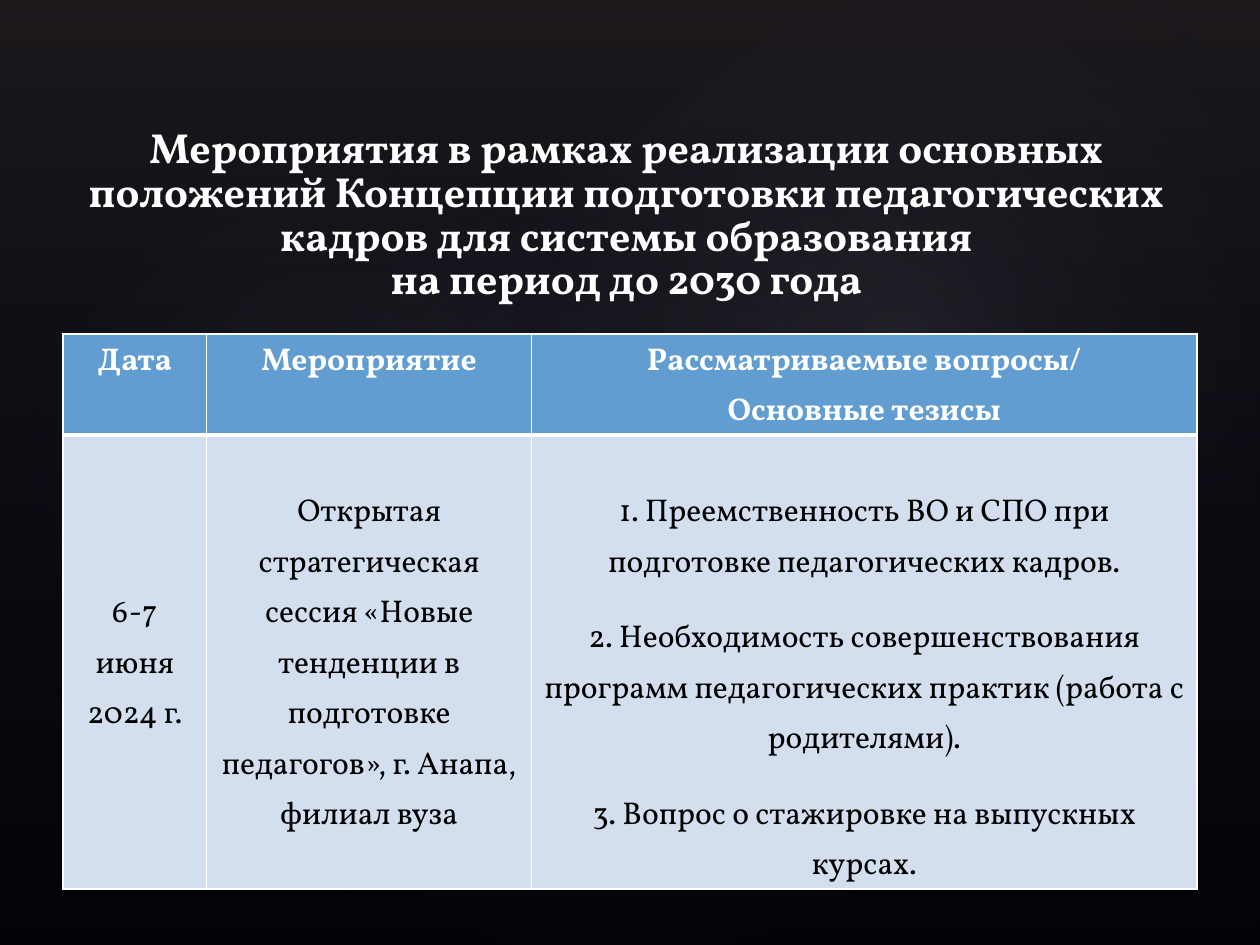
from dataclasses import dataclass
from pptx import Presentation
from pptx.dml.color import RGBColor
from pptx.enum.shapes import MSO_SHAPE
from pptx.enum.text import MSO_ANCHOR, PP_ALIGN
from pptx.oxml import parse_xml
from pptx.oxml.ns import nsdecls, qn
from pptx.slide import Slide
from pptx.table import _Cell
from pptx.text.text import _Paragraph
from pptx.util import Inches, Pt


@dataclass(frozen=True)
class Theme:
    font: str = "Vollkorn"
    white: str = "FFFFFF"
    black: str = "000000"
    head: str = "629DD1"
    body: str = "D3DFEE"
    glow: str = "C4BCC6"
    haze: str = "504652"
    navy: str = "242852"
    title: int = 24
    text: int = 18
    thin: int = 1
    thick: int = 3


@dataclass(frozen=True)
class Stop:
    place: int
    color: str
    alpha: int


@dataclass(frozen=True)
class Glow:
    left: float
    top: float
    width: float
    height: float
    turn: float
    alpha: int


@dataclass(frozen=True)
class Entry:
    lines: tuple[str, ...]
    top: float = 0
    gap: float = 0


@dataclass(frozen=True)
class Row:
    height: float
    fill: str
    color: str
    bold: bool
    edges: dict[str, int]
    cells: tuple[Entry, ...]


THEME = Theme()
LINEAR = '<a:lin ang="5400000" scaled="0"/>'
RADIAL = ('<a:path path="circle"><a:fillToRect l="50000" t="50000" '
          'r="50000" b="50000"/></a:path>')
GLOWS = (
    Glow(1.5, 1.14, 7.92, 6.24, 328.7, 7),
    Glow(-0.3, 1.28, 6.06, 4.9, 294.3, 8),
    Glow(3.58, 0.13, 7.09, 5.2, 328.7, 8),
)
TITLE = ("Мероприятия в рамках реализации основных положений Концепции "
         "подготовки педагогических кадров для системы образования",
         "на период до 2030 года")
WIDTHS = (1.14, 2.58, 5.28)
ROWS = (
    Row(0.64, THEME.head, THEME.white, True,
        {"L": THEME.thin, "R": THEME.thin, "T": THEME.thin, "B": THEME.thick},
        (Entry(("Дата",)), Entry(("Мероприятие",)),
         Entry(("Рассматриваемые вопросы/", "Основные тезисы")))),
    Row(3.2, THEME.body, THEME.black, False,
        {"L": THEME.thin, "R": THEME.thin, "T": THEME.thick, "B": THEME.thin},
        (Entry(("6-7 июня 2024 г.",), 1.2),
         Entry(("Открытая стратегическая сессия «Новые тенденции в подготовке "
                "педагогов», г. Анапа, филиал вуза",), 0.4),
         Entry(("1. Преемственность ВО и СПО при подготовке педагогических "
                "кадров.",
                "2. Необходимость совершенствования программ педагогических "
                "практик (работа с родителями).",
                "3. Вопрос о стажировке на выпускных курсах."), 0.4, 14.4))),
)


def add_run(para: _Paragraph, text: str, size: int, color: str, bold: bool) -> None:
    run = para.add_run()
    run.text = text
    run.font.name = THEME.font
    run.font.size = Pt(size)
    run.font.bold = bold
    run.font.color.rgb = RGBColor.from_string(color)


def add_shade(slide: Slide, kind: MSO_SHAPE, box: tuple[float, ...],
              stops: tuple[Stop, ...], mode: str, turn: float = 0) -> None:
    shape = slide.shapes.add_shape(kind, *map(Inches, box))
    shape.rotation = turn
    shape.shadow.inherit = False
    shape.line.fill.background()
    shape.fill.background()
    marks = "".join(
        f'<a:gs pos="{s.place * 1000}"><a:srgbClr val="{s.color}">'
        f'<a:alpha val="{s.alpha * 1000}"/></a:srgbClr></a:gs>' for s in stops)
    grad = parse_xml(f'<a:gradFill {nsdecls("a")} rotWithShape="1">'
                     f'<a:gsLst>{marks}</a:gsLst>{mode}</a:gradFill>')
    props = shape._element.spPr
    props.replace(props.find(qn("a:noFill")), grad)


def add_title(slide: Slide) -> None:
    box = slide.shapes.add_textbox(Inches(0.47), Inches(0.6), Inches(9), Inches(1.81))
    frame = box.text_frame
    frame.word_wrap = True
    frame.vertical_anchor = MSO_ANCHOR.BOTTOM
    frame.margin_bottom = 0
    para = frame.paragraphs[0]
    para.alignment = PP_ALIGN.CENTER
    para.line_spacing = 0.87
    for rank, text in enumerate(TITLE):
        if rank:
            para.add_line_break()
        add_run(para, text, THEME.title, THEME.white, True)


def fill_cell(cell: _Cell, entry: Entry, row: Row) -> None:
    props = cell._tc.get_or_add_tcPr()
    for side, width in row.edges.items():
        props.append(parse_xml(
            f'<a:ln{side} {nsdecls("a")} w="{Pt(width)}"><a:solidFill>'
            f'<a:srgbClr val="{THEME.white}"/></a:solidFill></a:ln{side}>'))
    cell.fill.solid()
    cell.fill.fore_color.rgb = RGBColor.from_string(row.fill)
    cell.margin_left = cell.margin_right = Inches(0.07)
    cell.margin_top, cell.margin_bottom = Inches(entry.top), 0
    frame = cell.text_frame
    for rank, text in enumerate(entry.lines):
        para = frame.add_paragraph() if rank else frame.paragraphs[0]
        para.alignment = PP_ALIGN.CENTER
        para.line_spacing = 1.15
        para.space_before = Pt(entry.gap if rank else 0)
        add_run(para, text, THEME.text, row.color, row.bold)


def add_grid(slide: Slide) -> None:
    table = slide.shapes.add_table(
        len(ROWS), len(WIDTHS), Inches(0.5), Inches(2.65), Inches(sum(WIDTHS)),
        Inches(sum(row.height for row in ROWS))).table
    for column, width in zip(table.columns, WIDTHS):
        column.width = Inches(width)
    for line, row in zip(table.rows, ROWS):
        line.height = Inches(row.height)
        for cell, entry in zip(line.cells, row.cells):
            fill_cell(cell, entry, row)


def main() -> None:
    """Build the slide of events on teacher training."""
    deck = Presentation()
    deck.slide_width, deck.slide_height = Inches(10), Inches(7.5)
    slide = deck.slides.add_slide(deck.slide_layouts[6])
    slide.background.fill.solid()
    slide.background.fill.fore_color.rgb = RGBColor.from_string(THEME.black)
    add_shade(slide, MSO_SHAPE.RECTANGLE, (0, 0, 10, 7.5),
              (Stop(0, THEME.haze, 36), Stop(100, THEME.navy, 10)), LINEAR)
    for glow in GLOWS:
        add_shade(slide, MSO_SHAPE.OVAL, (glow.left, glow.top, glow.width, glow.height),
                  (Stop(0, THEME.glow, glow.alpha), Stop(58, THEME.navy, 0)),
                  RADIAL, glow.turn)
    add_grid(slide)
    add_title(slide)
    deck.save("out.pptx")


if __name__ == "__main__":
    main()
